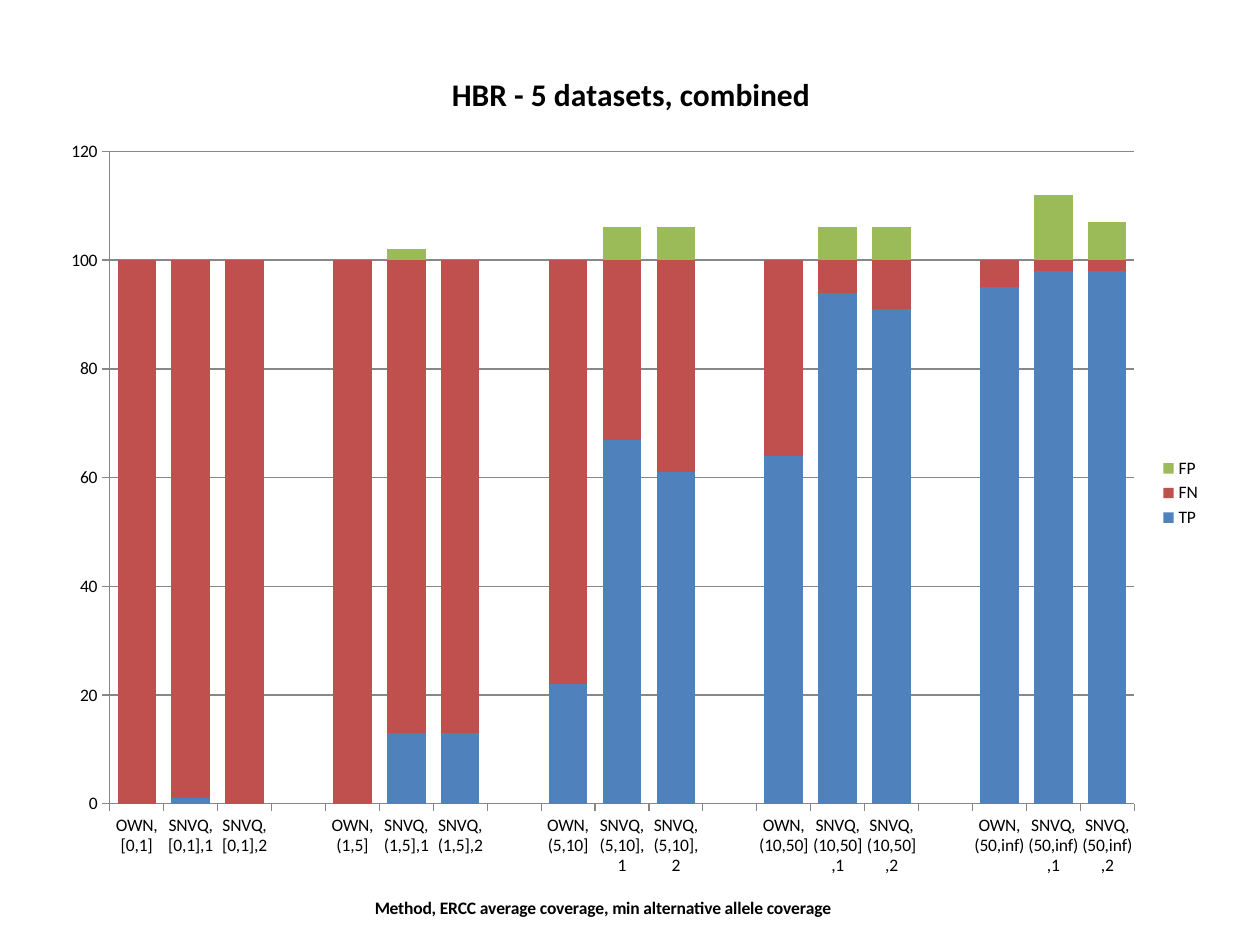
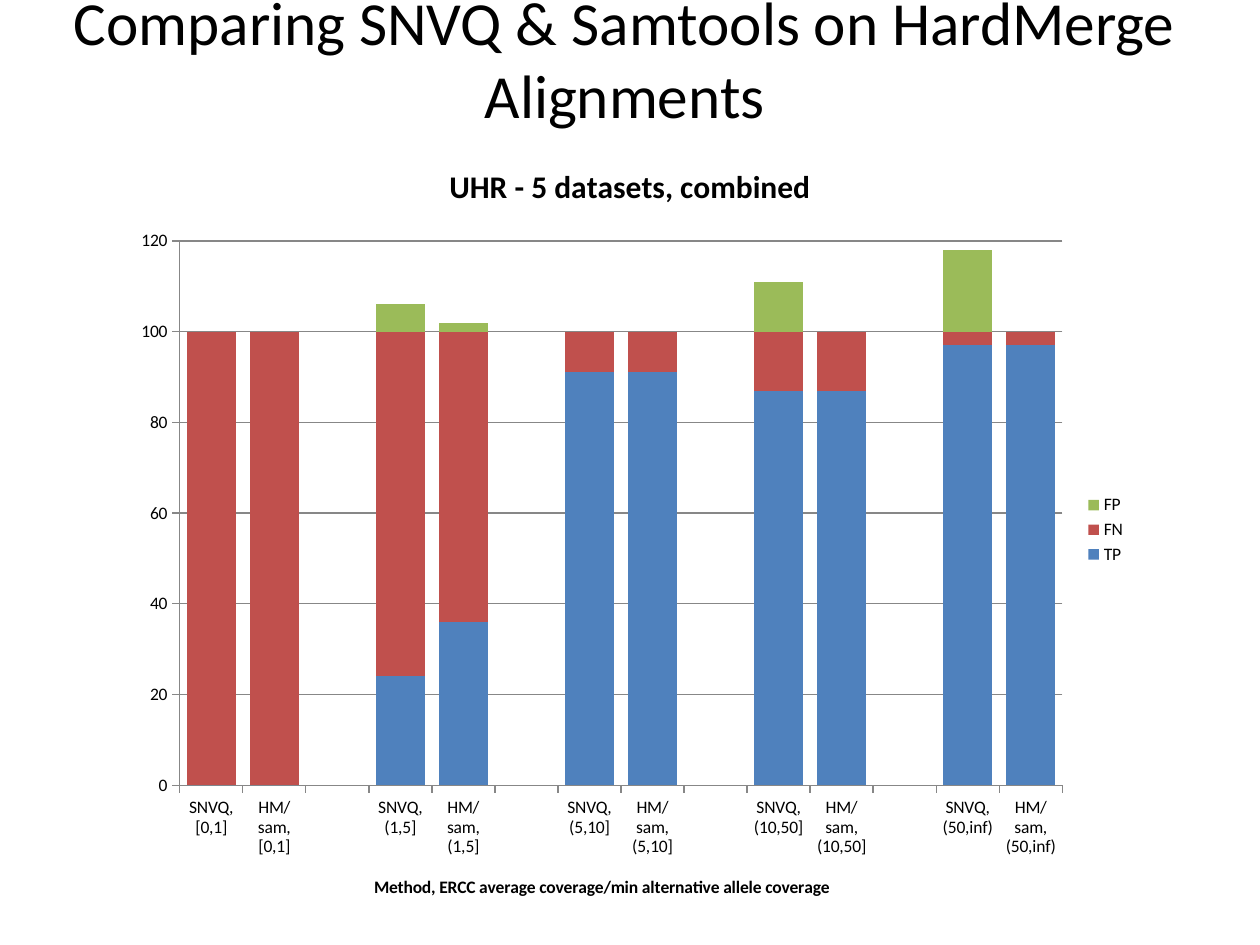
"""Build two slides of stacked column charts on variant calling accuracy."""
from pptx import Presentation
from pptx.chart.data import CategoryChartData
from pptx.dml.color import RGBColor
from pptx.enum.chart import XL_CHART_TYPE, XL_LEGEND_POSITION, XL_TICK_MARK
from pptx.enum.text import MSO_ANCHOR, MSO_AUTO_SIZE, PP_ALIGN
from pptx.util import Cm, Pt

FONT = "Calibri"
BLACK = "000000"
AXIS_GREY = "878787"
SERIES_COLORS = {"TP": "4F81BD", "FN": "C0504D", "FP": "9BBB59"}
COVERAGE_RANGES = ["[0,1]", "(1,5]", "(5,10]", "(10,50]", "(50,inf)"]


def rgb(color):
    """Turn a hex string into a colour."""
    return RGBColor.from_string(color)


def set_font(font, size, bold=False, color=BLACK):
    """Format a font."""
    font.name = FONT
    font.size = Pt(size)
    font.bold = bold
    font.color.rgb = rgb(color)


def write_text(tf, text, align=PP_ALIGN.CENTER, **font_format):
    """Write one formatted paragraph into a text frame."""
    p = tf.paragraphs[0]
    p.alignment = align
    r = p.add_run()
    r.text = text
    set_font(r.font, **font_format)


def add_title(s, text, left, top, width, height):
    """Fill and place the title placeholder."""
    sp = s.shapes.title
    sp.left, sp.top, sp.width, sp.height = map(Cm, (left, top, width, height))
    tf = sp.text_frame
    tf.word_wrap = True
    tf.auto_size = MSO_AUTO_SIZE.NONE
    tf.vertical_anchor = MSO_ANCHOR.MIDDLE
    write_text(tf, text, size=35)


def with_gaps(groups, gap):
    """Flatten groups into one list with a gap between neighbours."""
    flat = []
    for group in groups:
        flat += [*group, gap]
    return flat[:-1]


def make_chart_data(methods, tp, fp):
    """Build the series, with FN as the part of 100 that TP leaves."""
    data = CategoryChartData()
    data.categories = with_gaps(
        [[m.format(c) for m in methods] for c in COVERAGE_RANGES], "")
    fn = [[100 - value for value in group] for group in tp]
    for name, groups in zip(SERIES_COLORS, (tp, fn, fp)):
        data.add_series(name, with_gaps(groups, None))
    return data


def style_axis(axis):
    """Give an axis its line and ticks."""
    axis.format.line.color.rgb = rgb(AXIS_GREY)
    axis.format.line.width = Pt(0.75)
    axis.major_tick_mark = XL_TICK_MARK.OUTSIDE
    axis.minor_tick_mark = XL_TICK_MARK.NONE


def add_stacked_chart(s, data, box, title, axis_title, gap_width):
    """Add a stacked column chart with a legend on the right."""
    chart = s.shapes.add_chart(
        XL_CHART_TYPE.COLUMN_STACKED, *map(Cm, box), data).chart
    set_font(chart.font, size=10)
    chart.has_title = True
    write_text(chart.chart_title.text_frame, title, size=18, bold=True)
    chart.chart_title.include_in_layout = False
    chart.has_legend = True
    chart.legend.position = XL_LEGEND_POSITION.RIGHT
    chart.legend.include_in_layout = False

    plot = chart.plots[0]
    plot.gap_width = gap_width
    plot.overlap = 100
    plot.vary_by_categories = False
    for series in plot.series:
        series.format.fill.solid()
        series.format.fill.fore_color.rgb = rgb(SERIES_COLORS[series.name])

    category_axis, value_axis = chart.category_axis, chart.value_axis
    style_axis(category_axis)
    style_axis(value_axis)
    write_text(category_axis.axis_title.text_frame, axis_title,
               size=10, bold=True)
    value_axis.minimum_scale = 0
    value_axis.maximum_scale = 120
    value_axis.major_unit = 20
    value_axis.has_major_gridlines = True
    grid = value_axis.major_gridlines.format.line
    grid.color.rgb = rgb(AXIS_GREY)
    grid.width = Pt(0.75)


def add_hbr_slide(prs):
    """Add the HBR comparison of three method settings."""
    s = prs.slides.add_slide(prs.slide_layouts.get_by_name("Blank"))
    data = make_chart_data(
        methods=["OWN,{}", "SNVQ,{},1", "SNVQ,{},2"],
        tp=[(0, 1, 0), (0, 13, 13), (22, 67, 61), (64, 94, 91), (95, 98, 98)],
        fp=[(0, 0, 0), (0, 2, 0), (0, 6, 6), (0, 6, 6), (0, 12, 7)])
    add_stacked_chart(
        s, data, (0.97, 0.84, 23.5, 18.2), "HBR - 5 datasets, combined",
        "Method, ERCC average coverage, min alternative allele coverage", 40)


def add_uhr_slide(prs):
    """Add the UHR comparison of two methods."""
    s = prs.slides.add_slide(prs.slide_layouts.get_by_name("Title Only"))
    add_title(s, "Comparing SNVQ & Samtools on HardMerge Alignments",
              -0.84, -0.43, 26.87, 3.18)
    data = make_chart_data(
        methods=["SNVQ,{}", "HM/sam,{}"],
        tp=[(0, 0), (24, 36), (91, 91), (87, 87), (97, 97)],
        fp=[(0, 0), (6, 2), (0, 0), (11, 0), (18, 0)])
    add_stacked_chart(
        s, data, (2.44, 2.74, 20.52, 15.88), "UHR - 5 datasets, combined",
        "Method, ERCC average coverage/min alternative allele coverage", 28)


def main():
    """Build and save the slides."""
    prs = Presentation()
    prs.slide_width, prs.slide_height = Cm(25.4), Cm(19.05)
    add_hbr_slide(prs)
    add_uhr_slide(prs)
    prs.save("out.pptx")


if __name__ == "__main__":
    main()
